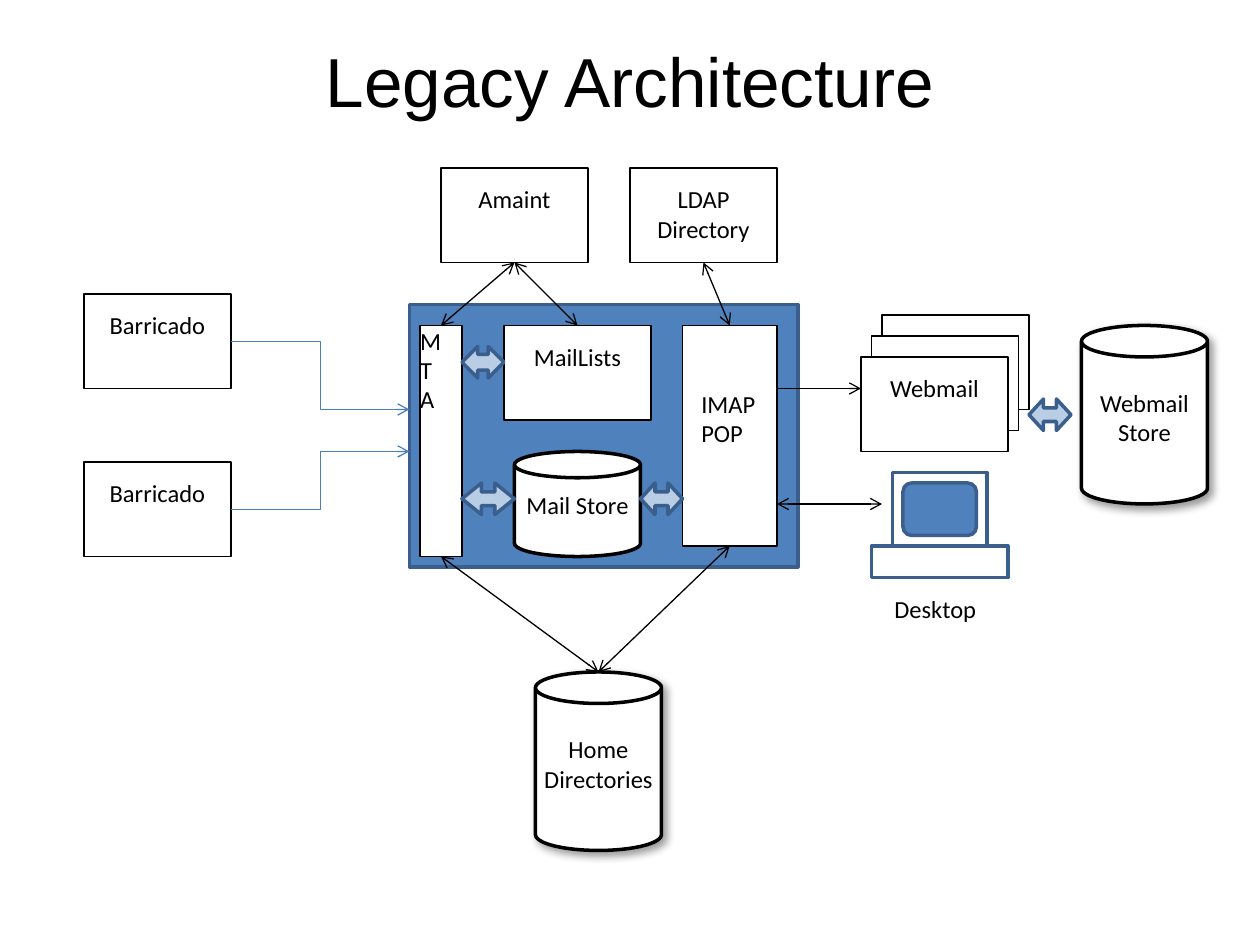
import lxml.etree
import pptx
import pptx.dml.color
import pptx.enum.shapes
import pptx.enum.text
import pptx.oxml.ns
import pptx.util

BLACK = pptx.dml.color.RGBColor(0x00, 0x00, 0x00)
WHITE = pptx.dml.color.RGBColor(0xFF, 0xFF, 0xFF)
BLUE = pptx.dml.color.RGBColor(0x4F, 0x81, 0xBD)
DARK_BLUE = pptx.dml.color.RGBColor(0x3A, 0x5F, 0x8C)
PALE_BLUE = pptx.dml.color.RGBColor(0xB9, 0xCD, 0xE5)
LINK_BLUE = pptx.dml.color.RGBColor(0x4B, 0x7E, 0xBC)

SHAPE = pptx.enum.shapes.MSO_SHAPE
CONNECTOR = pptx.enum.shapes.MSO_CONNECTOR
LEFT = pptx.enum.text.PP_ALIGN.LEFT
CENTER = pptx.enum.text.PP_ALIGN.CENTER
TOP = pptx.enum.text.MSO_ANCHOR.TOP
MIDDLE = pptx.enum.text.MSO_ANCHOR.MIDDLE
TOP_SIDE, BOTTOM_SIDE, RIGHT_SIDE = 0, 2, 3


def grid(*steps):
    """Turn layout steps of a twelfth of an inch into lengths."""
    return [pptx.util.Cm(step * 2.54 / 12) for step in steps]


def write(frame, text, size=14, font="Calibri", align=CENTER, anchor=TOP,
          insets=(0.25, 0.13, 0.25, 0.13), wrap=True):
    """Fill a text frame, one paragraph to a line; insets are in cm."""
    frame.word_wrap = wrap
    frame.vertical_anchor = anchor
    (frame.margin_left, frame.margin_top,
     frame.margin_right, frame.margin_bottom) = map(pptx.util.Cm, insets)
    frame.text = text
    for paragraph in frame.paragraphs:
        paragraph.alignment = align
        paragraph.font.name = font
        paragraph.font.size = pptx.util.Pt(size)
        paragraph.font.color.rgb = BLACK


def add_part(slide, preset, place, fill=None, line=BLACK, width=0.75):
    """Add a preset shape without a shadow."""
    part = slide.shapes.add_shape(preset, *grid(*place))
    part.shadow.inherit = False
    if fill is None:
        part.fill.background()
    else:
        part.fill.solid()
        part.fill.fore_color.rgb = fill
    part.line.color.rgb = line
    part.line.width = pptx.util.Pt(width)
    return part


def add_box(slide, text, left, top, fill=None):
    """Add a standard labelled component box."""
    box = add_part(slide, SHAPE.RECTANGLE, (left, top, 14, 9), fill)
    if text:
        write(box.text_frame, text, insets=(0.25, 0.33, 0.25, 0.13))
    return box


def add_store(slide, text, place, shadow=True):
    """Add a labelled storage cylinder."""
    store = add_part(slide, SHAPE.CAN, place, WHITE, width=2)
    write(store.text_frame, text, anchor=MIDDLE, insets=(0, 0.51, 0, 0.73))
    if shadow:
        qn = pptx.oxml.ns.qn
        effects = store._element.spPr.find(qn("a:effectLst"))
        outer = lxml.etree.SubElement(
            effects, qn("a:outerShdw"), blurRad=str(pptx.util.Pt(5)),
            dist=str(pptx.util.Pt(3)), dir="2700000", algn="tl", rotWithShape="0")
        shade = lxml.etree.SubElement(outer, qn("a:srgbClr"), val=str(BLACK))
        lxml.etree.SubElement(shade, qn("a:alpha"), val="40000")


def add_exchange(slide, place, shaft=0.43, point=0.46):
    """Add a two-way block arrow."""
    exchange = add_part(slide, SHAPE.LEFT_RIGHT_ARROW, place, PALE_BLUE, DARK_BLUE, 2)
    exchange.adjustments[0] = shaft
    exchange.adjustments[1] = point


def add_link(slide, start, end, two_way=True, kind=CONNECTOR.STRAIGHT, color=BLACK):
    """Link two ends, each a grid point or a (shape, side) pair."""
    qn = pptx.oxml.ns.qn
    link = slide.shapes.add_connector(kind, 0, 0, 0, 0)
    if isinstance(start[0], int):
        link.begin_x, link.begin_y = grid(*start)
    else:
        link.begin_connect(*start)
    if isinstance(end[0], int):
        link.end_x, link.end_y = grid(*end)
    else:
        link.end_connect(*end)
    link.line.color.rgb = color
    link.line.width = pptx.util.Pt(0.75)
    outline = link.line._get_or_add_ln()
    for tip in ("a:headEnd", "a:tailEnd") if two_way else ("a:tailEnd",):
        lxml.etree.SubElement(outline, qn(tip), type="arrow")
    lxml.etree.SubElement(link._element.spPr, qn("a:effectLst"))


def add_caption(slide, text, place, **style):
    """Add free-standing text."""
    caption = slide.shapes.add_textbox(*grid(*place))
    write(caption.text_frame, text, **style)


def add_desktop(slide):
    """Draw the desktop computer with its caption."""
    add_part(slide, SHAPE.ROUNDED_RECTANGLE, (86, 46, 7, 5), BLUE, DARK_BLUE, 2)
    for casing in ((85, 45, 9, 7), (83, 52, 13, 3)):
        add_part(slide, SHAPE.RECTANGLE, casing, None, DARK_BLUE, 2)
    add_caption(slide, "Desktop", (84, 56, 11, 4), align=LEFT, wrap=False)


def main():
    """Build the architecture slide."""
    deck = pptx.Presentation()
    deck.slide_width, deck.slide_height = grid(120, 90)
    slide = deck.slides.add_slide(deck.slide_layouts[6])
    add_caption(slide, "Legacy Architecture", (6, 3.6, 108, 15), size=39.6,
                font="Arial", insets=(0.25, 0, 0.25, 0))

    add_part(slide, SHAPE.RECTANGLE, (39, 29, 37, 25), BLUE, DARK_BLUE, 2)
    for top, entry in ((28, 39), (44, 43)):
        mail_filter = add_box(slide, "Barricado", 8, top)
        add_link(slide, (mail_filter, RIGHT_SIDE), (39, entry), False,
                 CONNECTOR.ELBOW, LINK_BLUE)

    mta = add_part(slide, SHAPE.RECTANGLE, (40, 31, 4, 22), WHITE)
    write(mta.text_frame, "MTA", align=LEFT, insets=(0, 0, 0, 0))
    mta.text_frame._txBody.bodyPr.set("vert", "wordArtVert")
    mail_lists = add_box(slide, "MailLists", 48, 31, WHITE)
    add_store(slide, "Mail Store", (49, 43, 12, 10), shadow=False)
    imap_pop = add_part(slide, SHAPE.RECTANGLE, (65, 31, 9, 21), WHITE)
    write(imap_pop.text_frame, "IMAP\nPOP", align=LEFT, insets=(0.38, 1.27, 0.25, 0.13))

    for step, label in enumerate(("", "", "Webmail")):
        add_box(slide, label, 84 - step, 30 + 2 * step, WHITE)
    add_store(slide, "Webmail Store", (103, 31, 12, 17))
    add_store(slide, "Home Directories", (51, 64, 12, 17))
    add_desktop(slide)
    amaint = add_box(slide, "Amaint", 42, 16)
    directory = add_box(slide, "LDAP Directory", 60, 16)

    add_exchange(slide, (44, 33, 4, 3), 0.5, 0.5)
    add_exchange(slide, (44, 46, 5, 3), point=0.62)
    add_exchange(slide, (61, 46, 4, 3))
    add_exchange(slide, (98, 38, 4, 3))

    add_link(slide, (74, 37), (82, 37), two_way=False)
    add_link(slide, (74, 48), (84, 48))
    for server in (imap_pop, mta):
        add_link(slide, (server, BOTTOM_SIDE), (57, 64))
    for server, source in ((mta, amaint), (mail_lists, amaint), (imap_pop, directory)):
        add_link(slide, (server, TOP_SIDE), (source, BOTTOM_SIDE))

    deck.save("out.pptx")


if __name__ == "__main__":
    main()
